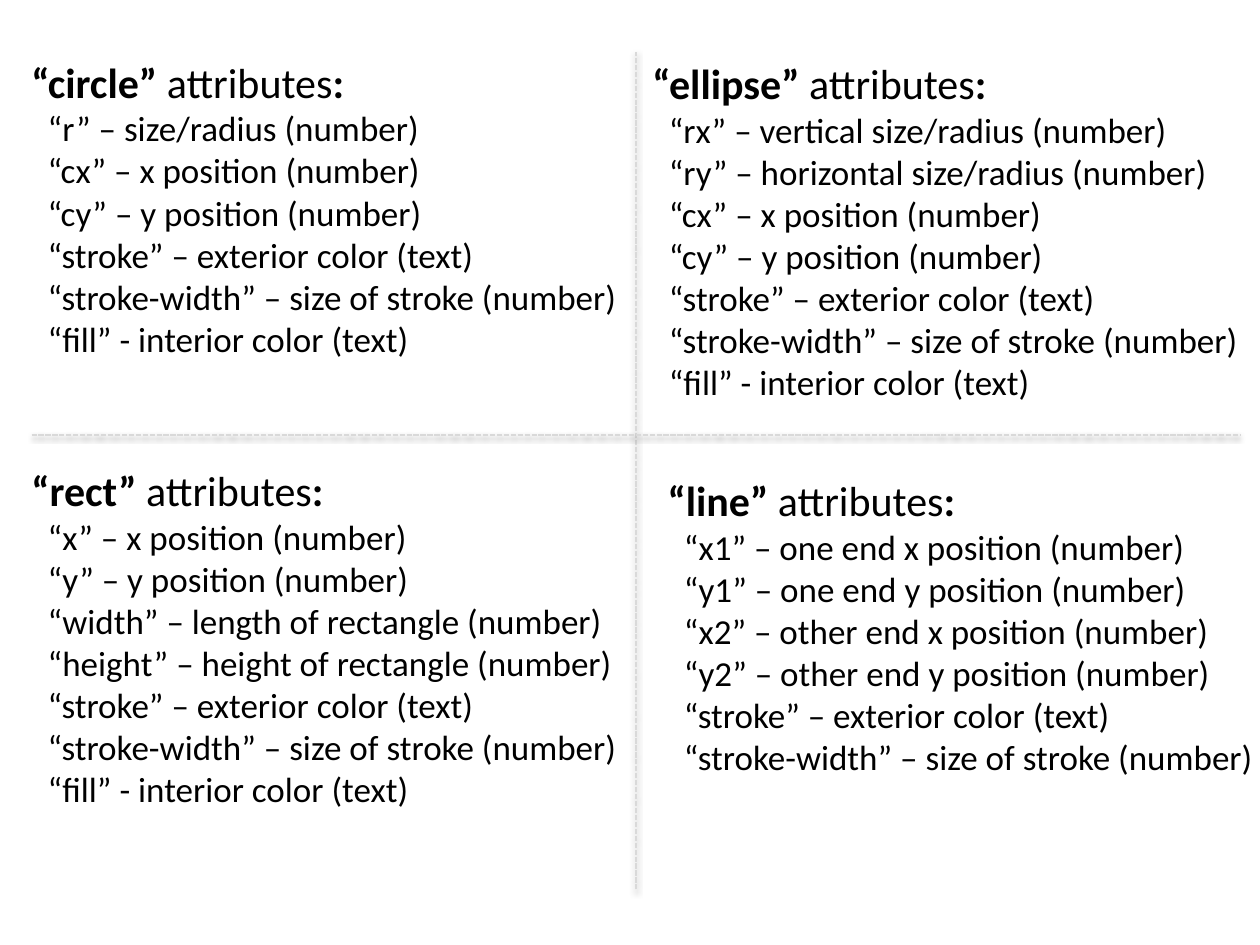
from dataclasses import dataclass

from lxml import etree
from pptx import Presentation
from pptx import util as u
from pptx.dml.color import RGBColor
from pptx.enum import dml, shapes, text
from pptx.oxml.ns import qn


@dataclass(frozen=True)
class Theme:
    font: str = "Calibri"
    ink: str = "000000"
    rule: str = "D9D9D9"
    shadow: str = "000000"
    heading: int = 24
    item: int = 20
    rule_width: int = 1
    indent: float = 0.13


THEME = Theme()
WIDTH, HEIGHT = u.Inches(10), u.Inches(7.5)
PANEL_WIDTH = 49.2

CENTER = ["“cx” – x position (number)", "“cy” – y position (number)"]
STROKE = ["“stroke” – exterior color (text)", "“stroke-width” – size of stroke (number)"]
FILL = ["“fill” - interior color (text)"]

PANELS = [
    ("circle", 1.5, 5.33, 33.6, ["“r” – size/radius (number)"] + CENTER + STROKE + FILL),
    ("ellipse", 50.8, 5.47, 38.13,
     ["“rx” – vertical size/radius (number)", "“ry” – horizontal size/radius (number)"]
     + CENTER + STROKE + FILL),
    ("rect", 1.5, 48.53, 38.13,
     ["“x” – x position (number)", "“y” – y position (number)",
      "“width” – length of rectangle (number)", "“height” – height of rectangle (number)"]
     + STROKE + FILL),
    ("line", 52, 49.6, 33.6,
     [f"“{axis}{number}” – {end} end {axis} position (number)"
      for number, end in ((1, "one"), (2, "other")) for axis in "xy"] + STROKE),
]


def across(percent):
    return round(WIDTH * percent / 100)


def down(percent):
    return round(HEIGHT * percent / 100)


def add_run(paragraph, words, size, bold=False):
    run = paragraph.add_run()
    run.text = words
    run.font.name = THEME.font
    run.font.size = u.Pt(size)
    run.font.bold = bold
    run.font.color.rgb = RGBColor.from_string(THEME.ink)


def add_panel(slide, element, left, top, height, items):
    shape = slide.shapes.add_textbox(across(left), down(top), across(PANEL_WIDTH), down(height))
    frame = shape.text_frame
    frame.word_wrap = False
    frame.auto_size = text.MSO_AUTO_SIZE.SHAPE_TO_FIT_TEXT
    heading = frame.paragraphs[0]
    add_run(heading, f"“{element}” ", THEME.heading, bold=True)
    add_run(heading, "attributes", THEME.heading)
    add_run(heading, ":", THEME.heading, bold=True)
    for item in items:
        paragraph = frame.add_paragraph()
        properties = paragraph._p.get_or_add_pPr()
        properties.set("marL", str(u.Inches(THEME.indent)))
        properties.set("indent", "0")
        add_run(paragraph, item, THEME.item)


def add_shadow(connector):
    effects = etree.SubElement(connector._element.spPr, qn("a:effectLst"))
    shadow = etree.SubElement(effects, qn("a:outerShdw"), blurRad="40000", dist="20000",
                              dir="5400000", rotWithShape="0")
    color = etree.SubElement(shadow, qn("a:srgbClr"), val=THEME.shadow)
    etree.SubElement(color, qn("a:alpha"), val="38000")


def add_divider(slide, start, end):
    connector = slide.shapes.add_connector(
        shapes.MSO_CONNECTOR.STRAIGHT,
        across(start[0]), down(start[1]), across(end[0]), down(end[1]))
    connector.line.color.rgb = RGBColor.from_string(THEME.rule)
    connector.line.width = u.Pt(THEME.rule_width)
    connector.line.dash_style = dml.MSO_LINE.SQUARE_DOT
    add_shadow(connector)


def main():
    presentation = Presentation()
    presentation.slide_width, presentation.slide_height = WIDTH, HEIGHT
    slide = presentation.slides.add_slide(presentation.slide_layouts[6])
    for panel in PANELS:
        add_panel(slide, *panel)
    add_divider(slide, (50.5, 94.13), (50.5, 5.47))
    add_divider(slide, (2.5, 46), (98.5, 46))
    presentation.save("out.pptx")


if __name__ == "__main__":
    main()
